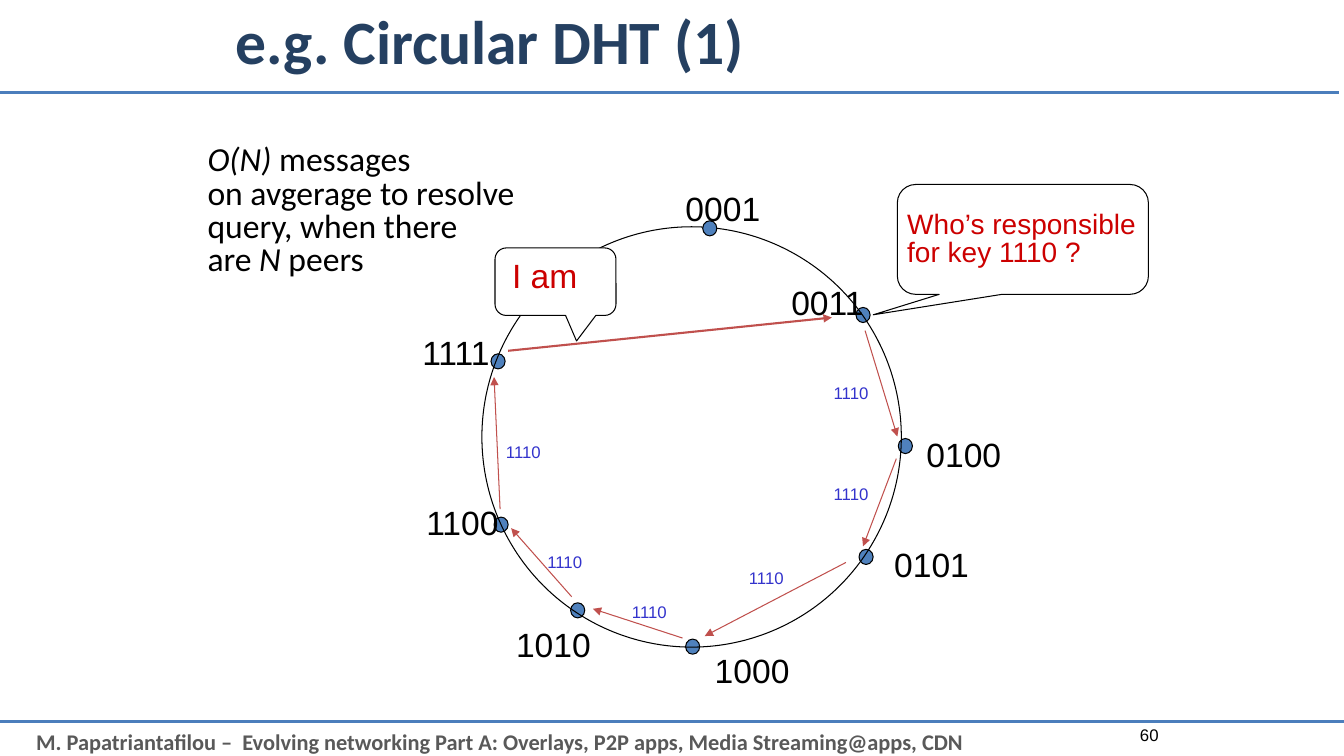
from dataclasses import dataclass

from lxml import etree
from pptx import Presentation
from pptx.dml.color import RGBColor
from pptx.enum.shapes import MSO_CONNECTOR, MSO_SHAPE
from pptx.enum.text import MSO_ANCHOR, MSO_AUTO_SIZE, PP_ALIGN
from pptx.oxml.ns import qn
from pptx.util import Inches, Pt

STRAIGHT = MSO_CONNECTOR.STRAIGHT
OVAL = MSO_SHAPE.OVAL
CALLOUT = MSO_SHAPE.ROUNDED_RECTANGULAR_CALLOUT
LEFT, RIGHT = PP_ALIGN.LEFT, PP_ALIGN.RIGHT
TOP, MIDDLE = MSO_ANCHOR.TOP, MSO_ANCHOR.MIDDLE
FIT, NO_FIT = MSO_AUTO_SIZE.SHAPE_TO_FIT_TEXT, MSO_AUTO_SIZE.NONE


@dataclass(frozen=True)
class Theme:
    head: str = "Calibri"
    body: str = "Arial"
    title: str = "254061"
    rule: str = "4B7EBC"
    footer: str = "595959"
    ink: str = "000000"
    paper: str = "FFFFFF"
    node: str = "4F81BD"
    arrow: str = "C0504D"
    speech: str = "CC0000"
    key: str = "3333CC"
    title_pt: int = 44
    label_pt: int = 24
    question_pt: int = 20
    footer_pt: int = 16
    small_pt: int = 12


T = Theme()

# Peer, dot position, label position and label width, from the ring's corner
PEERS = [
    ("0001", (2.19, -0.06), (1.92, -0.44), 0.95),
    ("0011", (3.71, 0.80), (2.97, 0.50), 0.93),
    ("0100", (4.13, 2.10), (4.31, 2.01), 0.95),
    ("0101", (3.74, 3.20), (3.99, 3.10), 0.95),
    ("1000", (2.02, 4.09), (2.21, 4.15), 0.95),
    ("1010", (0.88, 3.73), (0.24, 3.89), 0.95),
    ("1100", (0.12, 2.88), (-0.65, 2.68), 0.93),
    ("1111", (0.09, 1.26), (-0.69, 0.99), 0.88),
]

# Query hops: start, end, position of the key
HOPS = [
    ((3.80, 1.03), (4.12, 2.08), (3.39, 1.50)),
    ((4.11, 2.30), (3.78, 3.17), (3.39, 2.50)),
    ((3.61, 3.33), (2.21, 4.06), (2.55, 3.33)),
    ((1.99, 4.08), (1.10, 3.79), (1.39, 3.67)),
    ((0.89, 3.67), (0.29, 2.99), (0.55, 3.17)),
    ((0.18, 2.80), (0.12, 1.49), (0.14, 2.08)),
]
REPLY = ((0.26, 1.23), (3.47, 0.90))


def rgb(color):
    return RGBColor.from_string(color)


def add_text(s, box, text, *, size, font=T.body, color=T.ink, bold=None,
             align=LEFT, anchor=TOP, wrap=False, fit=FIT, spacing=None):
    """Add text; each paragraph is a string or a list of (text, italic) runs."""
    tf = s.shapes.add_textbox(*map(Inches, box)).text_frame
    tf.word_wrap, tf.auto_size, tf.vertical_anchor = wrap, fit, anchor
    for i, runs in enumerate([text] if isinstance(text, str) else text):
        p = tf.add_paragraph() if i else tf.paragraphs[0]
        p.alignment = align
        if spacing:
            p.line_spacing = Pt(spacing)
        for words, italic in [(runs, None)] if isinstance(runs, str) else runs:
            r = p.add_run()
            r.text = words
            r.font.name, r.font.size = font, Pt(size)
            r.font.bold, r.font.italic = bold, italic
            r.font.color.rgb = rgb(color)


def add_line(s, start, end, color, width, arrow=False):
    line = s.shapes.add_connector(STRAIGHT, *map(Inches, (*start, *end)))
    line.line.color.rgb, line.line.width = rgb(color), Pt(width)
    if arrow:
        etree.SubElement(line.line._get_or_add_ln(), qn("a:tailEnd"), type="triangle")
    etree.SubElement(line._element.spPr, qn("a:effectLst"))


def add_outline(s, kind, box, fill=None, adjustments=()):
    sp = s.shapes.add_shape(kind, *map(Inches, box))
    sp.shadow.inherit = False
    for i, value in enumerate(adjustments):
        sp.adjustments[i] = value
    if fill:
        sp.fill.solid()
        sp.fill.fore_color.rgb = rgb(fill)
    else:
        sp.fill.background()
    sp.line.color.rgb, sp.line.width = rgb(T.ink), Pt(0.75)


def add_header(s, x, y, w, h):
    add_line(s, (x - 0.05, y + 0.92), (x + w - 0.05, y + 0.92), T.rule, 2.25)
    add_text(s, (x + 2.24, y, 8.5, h), "e.g. Circular DHT (1)", size=T.title_pt,
             font=T.head, color=T.title, bold=True, anchor=MIDDLE, wrap=True, fit=NO_FIT)


def add_footer(s, x, y, w, h):
    add_line(s, (x, y), (x + w, y), T.rule, 2.25)
    add_text(s, (x + 0.26, y + 0.01, w - 0.26, h),
             "M. Papatriantafilou –  Evolving networking Part A: Overlays, "
             "P2P apps, Media Streaming@apps, CDN",
             size=T.footer_pt, font=T.head, color=T.footer, bold=True, wrap=True)
    add_text(s, (x + 10, y - 0.02, 1.59, 0.31), "60", size=T.small_pt,
             align=RIGHT, wrap=True, fit=NO_FIT)


def add_ring(s, x, y, w, h):
    def at(point):
        return x + point[0], y + point[1]

    def add_dots(peers):
        for _, dot, _, _ in peers:
            add_outline(s, OVAL, (*at(dot), 0.14, 0.15), T.node)

    # The top peer lies over the ring, the others under it
    add_dots(PEERS[1:])
    add_outline(s, OVAL, (x, y, w, h))
    add_dots(PEERS[:1])
    for name, _, label, width in PEERS:
        add_text(s, (*at(label), width, 0.51), name, size=T.label_pt)
    for start, end, key in HOPS:
        add_line(s, at(start), at(end), T.arrow, 0.75, arrow=True)
        add_text(s, (*at(key), 0.57, 0.3), "1110", size=T.small_pt, color=T.key)
    add_line(s, *map(at, REPLY), T.arrow, 1.5, arrow=True)


def add_question(s, x, y, w, h):
    add_outline(s, CALLOUT, (x, y, w, h), adjustments=(-0.596, 0.686, 0.167))
    add_text(s, (x, y + 0.23, w + 0.08, 0.66),
             ["Who’s responsible", "for key 1110 ?"],
             size=T.question_pt, color=T.speech, spacing=20)


def add_answer(s, x, y, w, h):
    add_outline(s, CALLOUT, (x, y, w, h), T.paper, (0.174, 0.878, 0.167))
    add_text(s, (x + 0.07, y + 0.02, w + 0.22, 0.51), "I am",
             size=T.label_pt, color=T.speech, wrap=True)


def add_cost_note(s, x, y, w, h):
    add_text(s, (x, y, w, h), [
        [("O(N) ", True), ("messages", False)],
        "on avgerage to resolve",
        "query, when there",
        [("are ", False), ("N", True), (" peers", False)],
    ], size=T.label_pt, font=T.head, spacing=23.8)


def main():
    prs = Presentation()
    prs.slide_width, prs.slide_height = Inches(13.33), Inches(7.5)
    s = prs.slides.add_slide(prs.slide_layouts[6])
    add_footer(s, 0, 7.16, 13.33, 0.37)
    add_header(s, 0, 0, 13.33, 0.8)
    add_ring(s, 4.78, 2.25, 4.16, 4.17)
    add_question(s, 8.9, 1.83, 2.49, 1.09)
    add_answer(s, 4.91, 2.46, 1.2, 0.67)
    add_cost_note(s, 1.96, 1.39, 3.28, 1.45)
    prs.save("out.pptx")


if __name__ == "__main__":
    main()
